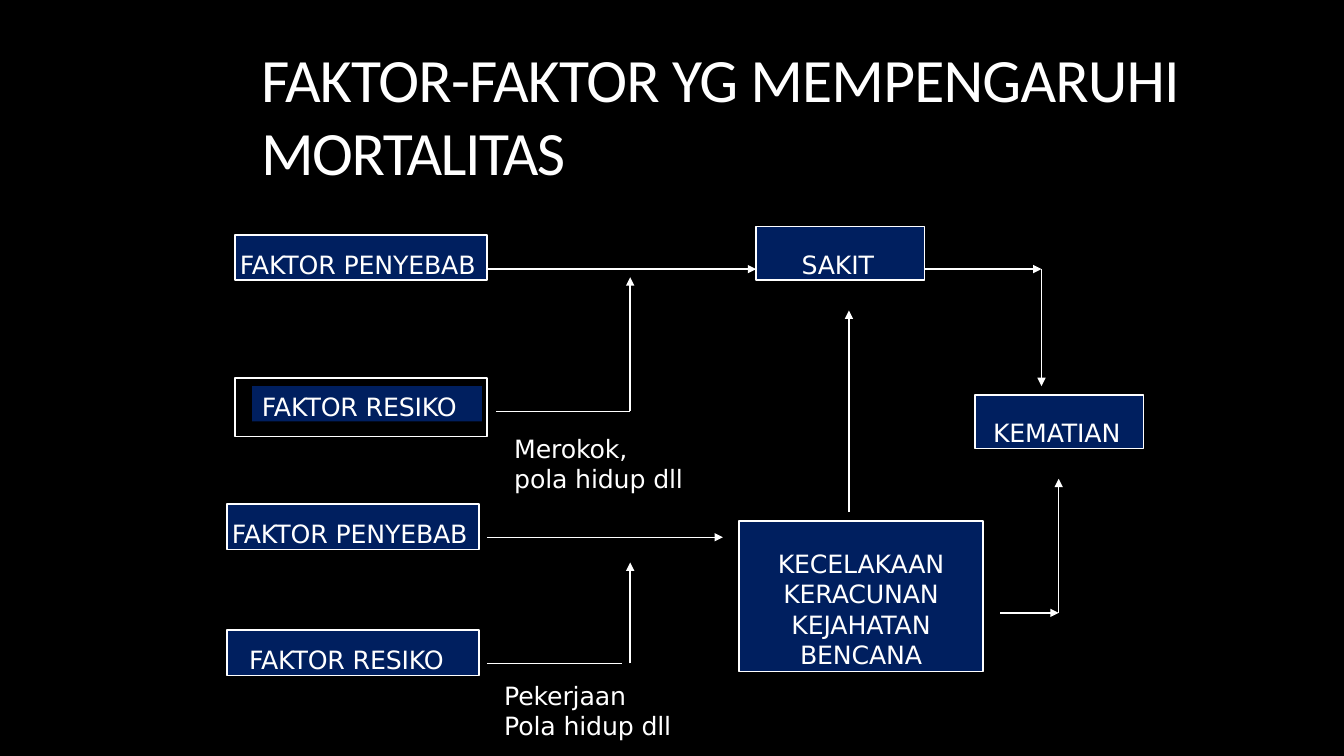
from itertools import cycle
from lxml.etree import SubElement as Sub
from pptx import Presentation
from pptx.dml.color import RGBColor as RGB
from pptx.enum.shapes import MSO_CONNECTOR as Link, MSO_SHAPE as Kind
from pptx.enum.text import MSO_ANCHOR as Anchor, PP_ALIGN as Align
from pptx.oxml.ns import qn
from pptx.util import Emu, Pt

HUES = {"black": "000000", "white": "FFFFFF", "navy": "001F5F"}
TITLE = {"name": "Calibri", "size": Pt(44)}
BODY = {"name": "DejaVu Sans", "size": Pt(18)}


def px(n):
    return Emu(n * 9144)  # 100 px to the inch


def hue(name):
    return RGB.from_string(HUES[name])


class Board:
    def __init__(self, deck):
        self.slide = deck.slides.add_slide(deck.slide_layouts[6])
        self.shapes = self.slide.shapes
        back = self.slide.background.fill
        back.solid()
        back.fore_color.rgb = hue("black")

    def label(self, shape, lines, left=0, top=0, font=BODY, gaps=(-10,),
              align=Align.LEFT, anchor=Anchor.TOP):
        frame = shape.text_frame
        form = {"word_wrap": True, "vertical_anchor": anchor,
                "margin_left": px(left), "margin_top": px(top),
                "margin_right": 0, "margin_bottom": 0}
        for key, value in form.items():
            setattr(frame, key, value)
        for i, (line, gap) in enumerate(zip(lines, cycle(gaps))):
            para = frame.add_paragraph() if i else frame.paragraphs[0]
            para.alignment = align
            run = para.add_run()
            run.text = line
            for key, value in font.items():
                setattr(run.font, key, value)
            run.font.color.rgb = hue("white")
            run._r.get_or_add_rPr().set("spc", str(gap))

    def text(self, x, y, w, h, lines, **style):
        box = self.shapes.add_textbox(px(x), px(y), px(w), px(h))
        self.label(box, lines, left=1, top=1, **style)

    def box(self, x, y, w, h, lines=(), fill="navy", edge="white", **style):
        rect = self.shapes.add_shape(Kind.RECTANGLE, px(x), px(y), px(w), px(h))
        rect.shadow.inherit = False
        if fill:
            rect.fill.solid()
            rect.fill.fore_color.rgb = hue(fill)
        else:
            rect.fill.background()
        if edge:
            rect.line.color.rgb = hue(edge)
            rect.line.width = Pt(1)
        else:
            rect.line.fill.background()
        if lines:
            self.label(rect, lines, **style)

    def line(self, x1, y1, x2, y2, head=True):
        link = self.shapes.add_connector(
            Link.STRAIGHT, px(x1), px(y1), px(x2), px(y2))
        link.line.color.rgb = hue("white")
        link.line.width = Pt(1)
        props = link._element.spPr
        if head:
            Sub(props.find(qn("a:ln")), qn("a:tailEnd"), type="triangle")
        Sub(props, qn("a:effectLst"))


def main():
    deck = Presentation()
    deck.slide_width, deck.slide_height = px(1333), px(750)
    board = Board(deck)

    # Title
    board.text(258, 38, 1150, 150,
               ["FAKTOR-FAKTOR YG MEMPENGARUHI", "MORTALITAS"],
               font=TITLE, gaps=(-63, -110), anchor=Anchor.MIDDLE)

    # Causes and risks
    board.box(233, 375, 250, 58, fill=None)
    board.box(250, 383, 228, 35, ["FAKTOR RESIKO"], edge=None, left=10, top=5)
    for x, y, name, left in [(233, 233, "FAKTOR PENYEBAB", 5),
                             (225, 500, "FAKTOR PENYEBAB", 5),
                             (225, 625, "FAKTOR RESIKO", 22)]:
        board.box(x, y, 250, 45, [name], left=left, top=14)

    # Outcomes
    board.box(750, 225, 167, 53, ["SAKIT"], left=45, top=22)
    board.box(967, 392, 167, 53, ["KEMATIAN"], left=18, top=22)
    board.box(733, 517, 242, 149,
              ["KECELAKAAN", "KERACUNAN", "KEJAHATAN", "BENCANA"],
              top=27, align=Align.CENTER)

    # Arrows
    for ends in [(483, 267, 750, 267), (625, 408, 625, 275),
                 (483, 533, 717, 533), (625, 658, 625, 558),
                 (917, 267, 1033, 267), (1033, 267, 1033, 383),
                 (992, 608, 1050, 608), (1050, 608, 1050, 475),
                 (842, 508, 842, 308)]:
        board.line(*ends)
    board.line(492, 408, 625, 408, head=False)
    board.line(483, 658, 617, 658, head=False)

    # Examples of risks
    board.text(509, 429, 172, 63, ["Merokok,", "pola hidup dll"])
    board.text(499, 674, 171, 63, ["Pekerjaan", "Pola hidup dll"])

    deck.save("out.pptx")


if __name__ == "__main__":
    main()
